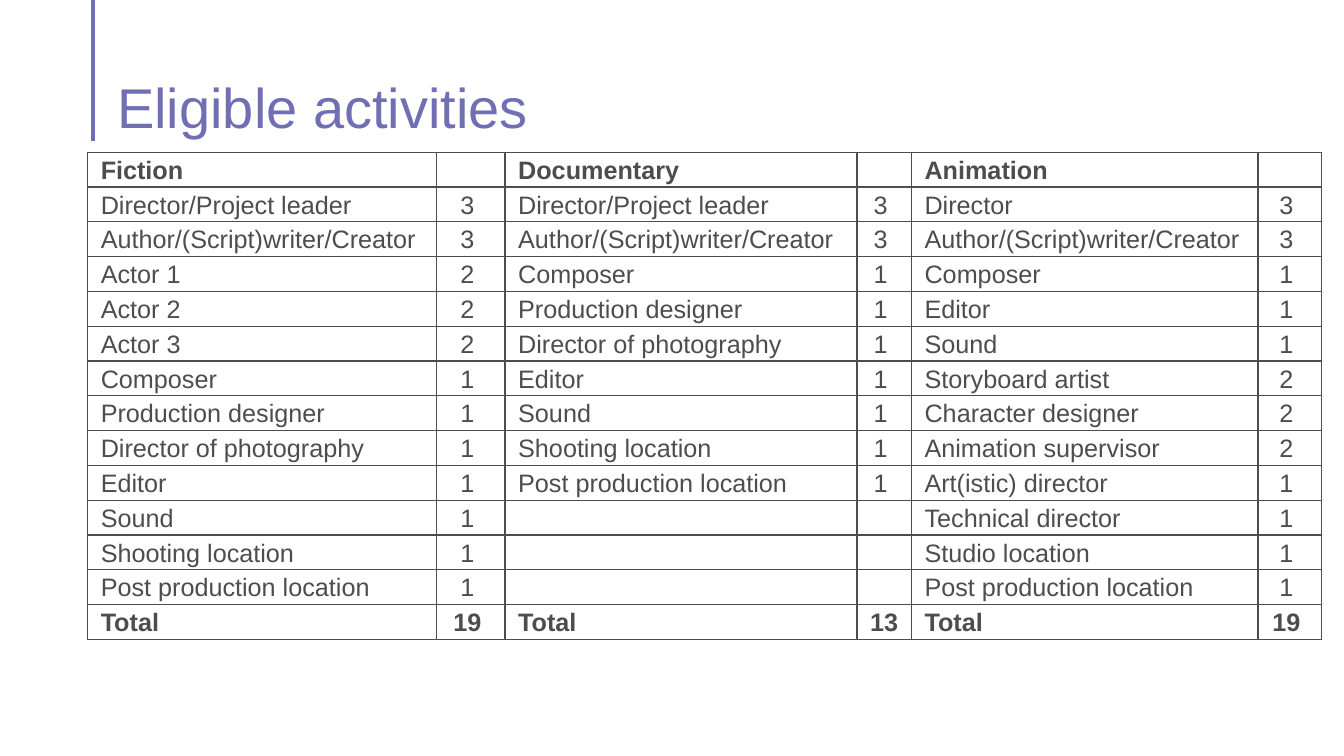
from lxml import etree
from pptx import Presentation
from pptx.dml.color import RGBColor
from pptx.enum import shapes, text
from pptx.oxml import ns
from pptx.util import Pt

# Content: each genre has (activity, points) rows, then its total
TITLE = "Eligible activities"
GENRES = {
    "Fiction": [
        ("Director/Project leader", 3), ("Author/(Script)writer/Creator", 3),
        ("Actor 1", 2), ("Actor 2", 2), ("Actor 3", 2), ("Composer", 1),
        ("Production designer", 1), ("Director of photography", 1),
        ("Editor", 1), ("Sound", 1), ("Shooting location", 1),
        ("Post production location", 1)],
    "Documentary": [
        ("Director/Project leader", 3), ("Author/(Script)writer/Creator", 3),
        ("Composer", 1), ("Production designer", 1),
        ("Director of photography", 1), ("Editor", 1), ("Sound", 1),
        ("Shooting location", 1), ("Post production location", 1)],
    "Animation": [
        ("Director", 3), ("Author/(Script)writer/Creator", 3),
        ("Composer", 1), ("Editor", 1), ("Sound", 1),
        ("Storyboard artist", 2), ("Character designer", 2),
        ("Animation supervisor", 2), ("Art(istic) director", 1),
        ("Technical director", 1), ("Studio location", 1),
        ("Post production location", 1)],
}
TOTALS = {"Fiction": 19, "Documentary": 13, "Animation": 19}

# Format
COLORS = {"accent": "716FB3", "text": "4D4D4D"}
FONT = "Arial"
COL_WIDTHS = [249.2, 49, 251.4, 38.9, 247.6, 45.4]
ROW_HEIGHT = 24.88
TABLE_LEFT, TABLE_TOP = 62.6, 108.7
ROWS = max(len(rows) for rows in GENRES.values()) + 2


def write(tf, content, size, color, spacing, bold=False, align=None):
    p = tf.paragraphs[0]
    p.alignment = align
    p.line_spacing = spacing
    r = p.add_run()
    r.text = content
    r.font.name, r.font.size, r.font.bold = FONT, Pt(size), bold
    r.font.color.rgb = RGBColor.from_string(COLORS[color])


def add_borders(cell):
    tcPr = cell._tc.get_or_add_tcPr()
    for i, side in enumerate(("lnL", "lnR", "lnT", "lnB")):
        ln = etree.Element(ns.qn(f"a:{side}"), w=str(Pt(1)))
        fill = etree.SubElement(ln, ns.qn("a:solidFill"))
        etree.SubElement(fill, ns.qn("a:srgbClr"), val=COLORS["text"])
        tcPr.insert(i, ln)


prs = Presentation()
prs.slide_width, prs.slide_height = Pt(960), Pt(540)
s = prs.slides.add_slide(prs.slide_layouts[5])

# Accent line beside the title
line = s.shapes.add_connector(shapes.MSO_CONNECTOR.STRAIGHT,
                              Pt(66.4), Pt(0), Pt(66.4), Pt(100.8))
line.line.color.rgb = RGBColor.from_string(COLORS["accent"])
line.line.width = Pt(2.25)
etree.SubElement(line._element.spPr, ns.qn("a:effectLst"))

# Title
title = s.shapes.title
title.left, title.top, title.width, title.height = Pt(76.5), Pt(38.2), Pt(828), Pt(62)
tf = title.text_frame
tf.margin_left = tf.margin_right = Pt(7.2)
tf.margin_top, tf.margin_bottom = Pt(3.6), Pt(0)
tf.vertical_anchor = text.MSO_ANCHOR.BOTTOM
tf.auto_size = text.MSO_AUTO_SIZE.NONE
write(tf, TITLE, 40, "accent", 0.9, align=text.PP_ALIGN.LEFT)

# Table grid
table = s.shapes.add_table(ROWS, len(COL_WIDTHS), Pt(TABLE_LEFT), Pt(TABLE_TOP),
                           Pt(sum(COL_WIDTHS)), Pt(ROWS * ROW_HEIGHT)).table
table.first_row = table.horz_banding = False
for column, width in zip(table.columns, COL_WIDTHS):
    column.width = Pt(width)
for row in table.rows:
    row.height = Pt(ROW_HEIGHT)
for cell in table.iter_cells():
    cell.margin_left = cell.margin_right = Pt(9.4)
    cell.margin_top = cell.margin_bottom = Pt(0)
    cell.fill.background()
    add_borders(cell)

# Table text: a name column and a points column for each genre
for g, (genre, activities) in enumerate(GENRES.items()):
    entries = {0: (genre, None), ROWS - 1: ("Total", TOTALS[genre])}
    entries.update(enumerate(activities, start=1))
    for row, (name, points) in entries.items():
        bold = row in (0, ROWS - 1)
        write(table.cell(row, 2 * g).text_frame, name, 18, "text", 1.15,
              bold=bold, align=text.PP_ALIGN.JUSTIFY)
        if points is not None:
            write(table.cell(row, 2 * g + 1).text_frame, f"{points} ", 18, "text",
                  1.15, bold=bold, align=text.PP_ALIGN.CENTER)

prs.save("out.pptx")
